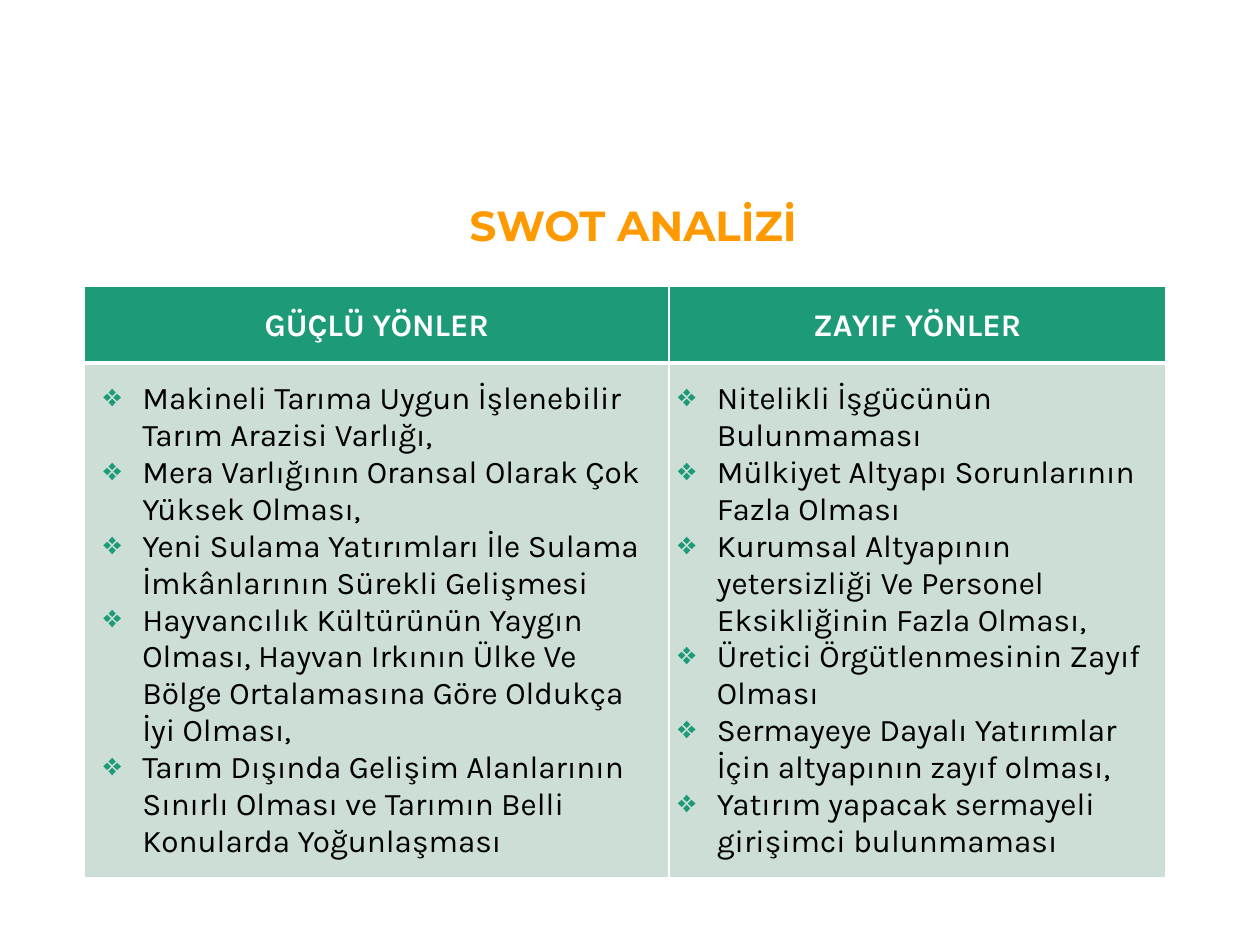
from dataclasses import dataclass

import pptx
import pptx.dml.color
import pptx.enum.text
import pptx.oxml
import pptx.oxml.ns
import pptx.util

Inches = pptx.util.Inches
Pt = pptx.util.Pt
ALIGN = pptx.enum.text.PP_ALIGN
ANCHOR = pptx.enum.text.MSO_ANCHOR


@dataclass(frozen=True)
class Theme:
    green: str = "1D9A78"
    pale_green: str = "CDDED6"
    orange: str = "FF9900"
    white: str = "FFFFFF"
    black: str = "000000"
    title_font: str = "Montserrat"
    table_font: str = "Karla"
    title_size: int = 24
    table_size: int = 18
    thin_border: int = 1
    thick_border: int = 3


@dataclass(frozen=True)
class SwotColumn:
    heading: str
    width: float
    indent: float
    points: tuple[str, ...]


THEME = Theme()
HANGING = 0.31
ROW_HEIGHTS = (0.61, 4.09)

COLUMNS = (
    SwotColumn("GÜÇLÜ YÖNLER", 4.64, 0.41, (
        "Makineli Tarıma Uygun İşlenebilir Tarım Arazisi Varlığı,",
        "Mera Varlığının Oransal Olarak Çok Yüksek Olması,",
        "Yeni Sulama Yatırımları İle Sulama İmkânlarının Sürekli Gelişmesi",
        "Hayvancılık Kültürünün Yaygın Olması, Hayvan Irkının Ülke Ve Bölge "
        "Ortalamasına Göre Oldukça İyi Olması,",
        "Tarım Dışında Gelişim Alanlarının Sınırlı Olması ve Tarımın Belli "
        "Konularda Yoğunlaşması",
    )),
    SwotColumn("ZAYIF YÖNLER", 3.94, 0.33, (
        "Nitelikli İşgücünün Bulunmaması",
        "Mülkiyet Altyapı Sorunlarının Fazla Olması",
        "Kurumsal Altyapının yetersizliği Ve Personel Eksikliğinin Fazla Olması,",
        "Üretici Örgütlenmesinin Zayıf Olması",
        "Sermayeye Dayalı Yatırımlar İçin altyapının zayıf olması,",
        "Yatırım yapacak sermayeli girişimci bulunmaması",
    )),
)


def rgb(color: str) -> pptx.dml.color.RGBColor:
    return pptx.dml.color.RGBColor.from_string(color)


def style_text(paragraph, font: str, size: int, color: str, bold: bool) -> None:
    for run in paragraph.runs:
        run.font.name = font
        run.font.size = Pt(size)
        run.font.bold = bold
        run.font.color.rgb = rgb(color)


def add_bullet(paragraph, indent: float) -> None:
    properties = paragraph._p.get_or_add_pPr()
    properties.set("marL", str(Inches(indent)))
    properties.set("indent", str(-Inches(HANGING)))
    namespace = pptx.oxml.ns.nsdecls("a")
    for xml in (
        f'<a:buClr {namespace}><a:srgbClr val="{THEME.green}"/></a:buClr>',
        f'<a:buChar {namespace} char="❖"/>',
        f'<a:tabLst {namespace}><a:tab pos="{Inches(0.5)}" algn="l"/></a:tabLst>',
    ):
        properties.append(pptx.oxml.parse_xml(xml))


def set_borders(cell, top: int, bottom: int) -> None:
    widths = {"L": THEME.thin_border, "R": THEME.thin_border, "T": top, "B": bottom}
    properties = cell._tc.get_or_add_tcPr()
    for position, (side, width) in enumerate(widths.items()):
        properties.insert(position, pptx.oxml.parse_xml(
            f'<a:ln{side} {pptx.oxml.ns.nsdecls("a")} w="{Pt(width)}">'
            f'<a:solidFill><a:srgbClr val="{THEME.white}"/></a:solidFill>'
            f'</a:ln{side}>'))


def prepare_cell(cell, fill: str, top: int, bottom: int) -> None:
    cell.vertical_anchor = ANCHOR.MIDDLE
    cell.margin_left = cell.margin_right = Inches(0.05)
    cell.margin_top = cell.margin_bottom = 0
    cell.fill.solid()
    cell.fill.fore_color.rgb = rgb(fill)
    set_borders(cell, top, bottom)


def fill_column(table, index: int, column: SwotColumn) -> None:
    table.columns[index].width = Inches(column.width)

    # Heading
    heading = table.cell(0, index)
    prepare_cell(heading, THEME.green, THEME.thin_border, THEME.thick_border)
    paragraph = heading.text_frame.paragraphs[0]
    paragraph.text = column.heading
    paragraph.alignment = ALIGN.CENTER
    paragraph.line_spacing = 1.07
    style_text(paragraph, THEME.table_font, THEME.table_size, THEME.white, True)

    # Bulleted points
    body = table.cell(1, index)
    prepare_cell(body, THEME.pale_green, THEME.thick_border, THEME.thin_border)
    body.text_frame.text = "\n".join(column.points)
    for paragraph in body.text_frame.paragraphs:
        add_bullet(paragraph, column.indent)
        style_text(paragraph, THEME.table_font, THEME.table_size, THEME.black, False)


def add_swot_table(slide) -> None:
    table = slide.shapes.add_table(
        len(ROW_HEIGHTS), len(COLUMNS), Inches(0.67), Inches(2.27),
        Inches(sum(column.width for column in COLUMNS)), Inches(sum(ROW_HEIGHTS))).table
    table.horz_banding = False
    for row, height in zip(table.rows, ROW_HEIGHTS):
        row.height = Inches(height)
    for index, column in enumerate(COLUMNS):
        fill_column(table, index, column)


def add_title(slide) -> None:
    title = slide.shapes.add_textbox(Inches(2.16), Inches(1.58), Inches(5.73), Inches(0.59))
    title.text_frame.word_wrap = True
    paragraph = title.text_frame.paragraphs[0]
    paragraph.text = "SWOT ANALİZİ"
    paragraph.alignment = ALIGN.CENTER
    paragraph.line_spacing = 0.9
    style_text(paragraph, THEME.title_font, THEME.title_size, THEME.orange, True)


def main() -> None:
    presentation = pptx.Presentation()
    presentation.slide_width = Inches(10)
    presentation.slide_height = Inches(7.5)
    slide = presentation.slides.add_slide(presentation.slide_layouts[6])
    add_swot_table(slide)
    add_title(slide)
    presentation.save("out.pptx")


if __name__ == "__main__":
    main()
